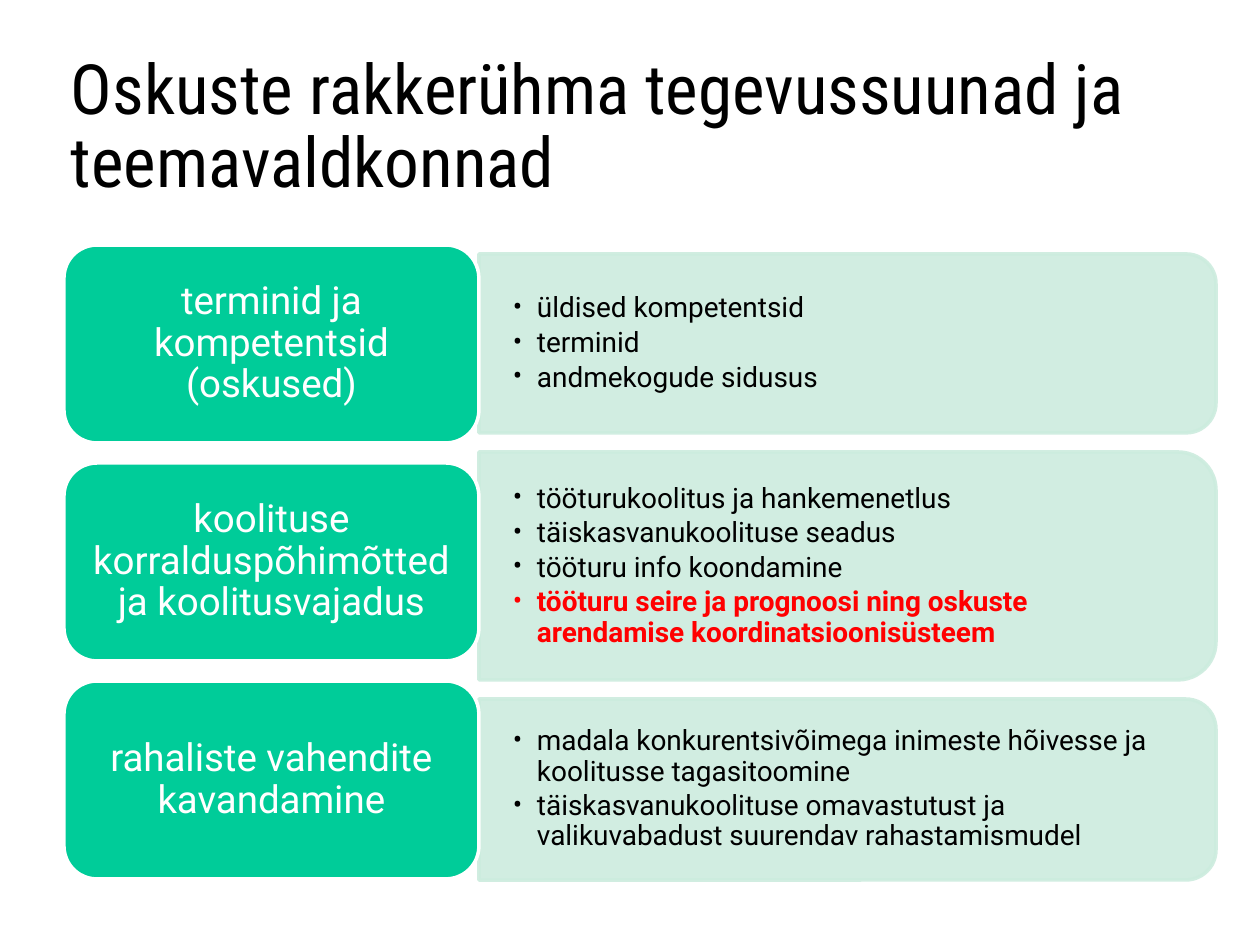
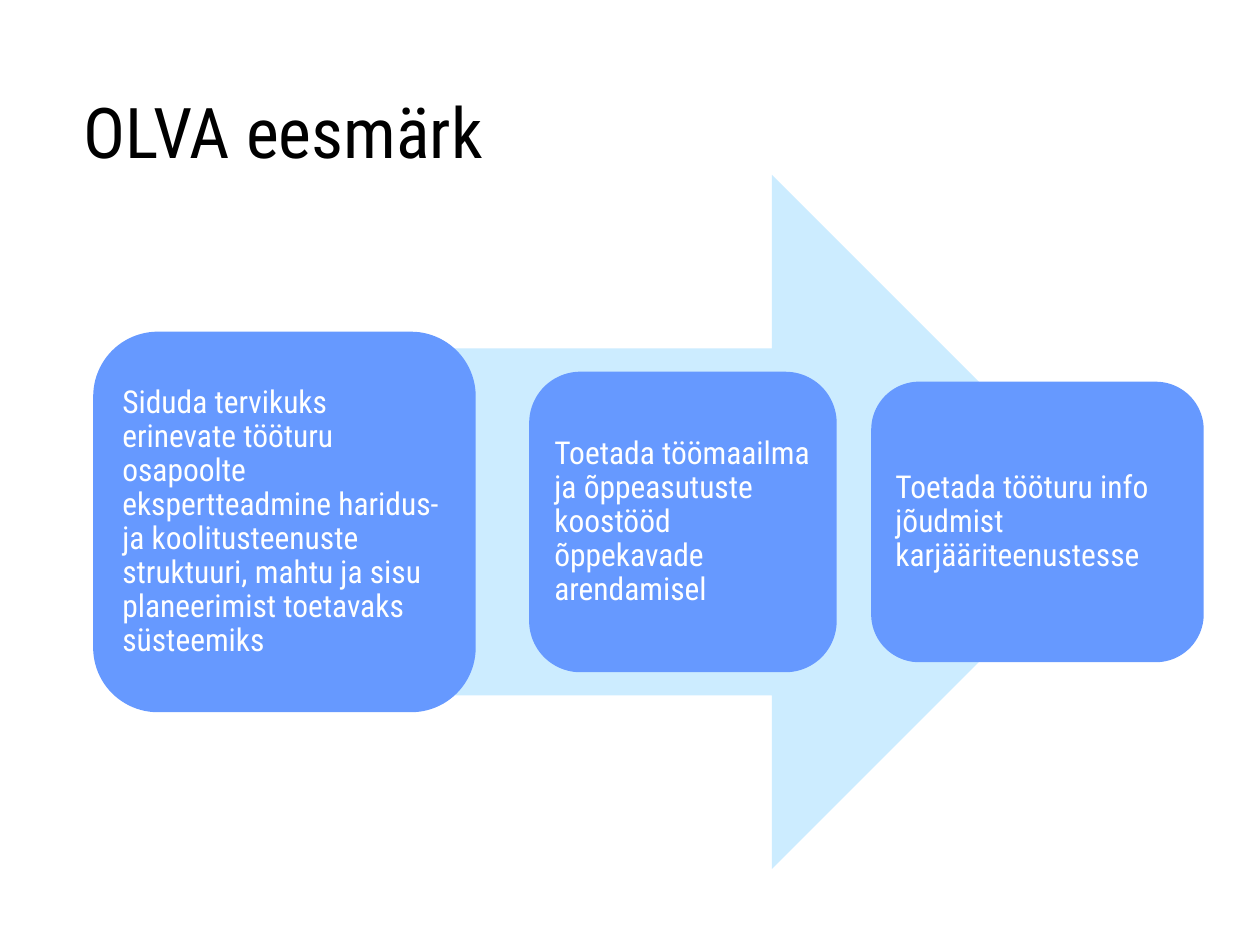
from pptx import Presentation
from pptx.dml.color import RGBColor
from pptx.enum.shapes import MSO_SHAPE as Shape
from pptx.enum.text import MSO_ANCHOR as Anchor, MSO_AUTO_SIZE as AutoSize, PP_ALIGN as Align
from pptx.oxml.ns import qn
from pptx.util import Emu, Pt
from lxml.etree import SubElement

EMU_PER_PX = 914400 / 126

COLORS = {
    "title": "000000",
    "body": "000000",
    "alert": "FF0000",
    "on_box": "FFFFFF",
    "topic": "00CC99",
    "topic_edge": "FFFFFF",
    "panel": "CCECDE",
    "arrow": "CCECFF",
    "goal": "6699FF",
}
BODY_FONT = "Roboto"
CONDENSED_FONT = "Roboto Condensed"

TOPICS_TITLE = "Oskuste rakkerühma tegevussuunad ja teemavaldkonnad"
# topic, panel height, points
TOPICS = [
    ("terminid ja kompetentsid (oskused)", 179,
     ["üldised kompetentsid", "terminid", "andmekogude sidusus"]),
    ("koolituse korralduspõhimõtted ja koolitusvajadus", 228,
     ["tööturukoolitus ja hankemenetlus",
      "täiskasvanukoolituse seadus",
      "tööturu info koondamine",
      "tööturu seire ja prognoosi ning oskuste arendamise koordinatsioonisüsteem"]),
    ("rahaliste vahendite kavandamine", 181,
     ["madala konkurentsivõimega inimeste hõivesse ja koolitusse tagasitoomine",
      "täiskasvanukoolituse omavastutust ja valikuvabadust suurendav rahastamismudel"]),
]
ALERT_POINT = TOPICS[1][2][-1]

GOALS_TITLE = "OLVA eesmärk"
# goal, left, width, height
GOALS = [
    ("Siduda tervikuks erinevate tööturu osapoolte ekspertteadmine haridus- ja "
     "koolitusteenuste struktuuri, mahtu ja sisu planeerimist toetavaks süsteemiks",
     95, 379, 377),
    ("Toetada töömaailma ja õppeasutuste koostööd õppekavade arendamisel", 531, 304, 297),
    ("Toetada tööturu info jõudmist karjääriteenustesse", 873, 329, 277),
]

TOPIC_LEFT, TOPIC_TOP, TOPIC_WIDTH, TOPIC_HEIGHT, TOPIC_STEP = 64, 245, 415, 198, 218
PANEL_LEFT, PANEL_TOP, PANEL_WIDTH, PANEL_GAP = 479, 254, 737, 19
PANEL_CORNER_INSET = 0.05
BULLET_INDENT = 24
ARROW = (178, 175, 941, 694)


def px(length):
    return Emu(round(length * EMU_PER_PX))


def rgb(name):
    return RGBColor.from_string(COLORS[name])


def set_frame(frame, inset_x=0, inset_y=0):
    frame.auto_size = AutoSize.NONE
    frame.word_wrap = True
    frame.vertical_anchor = Anchor.MIDDLE
    frame.margin_left = frame.margin_right = px(inset_x)
    frame.margin_top = frame.margin_bottom = px(inset_y)


def write(paragraph, text, font, size, color, align=Align.LEFT, spacing=0.9, bold=False):
    paragraph.alignment = align
    paragraph.line_spacing = spacing
    run = paragraph.add_run()
    run.text = text
    run.font.name = font
    run.font.size = Pt(size)
    run.font.bold = bold
    run.font.color.rgb = rgb(color)


def add_titled_slide(deck, text, size, place):
    slide = deck.slides.add_slide(deck.slide_layouts[5])
    title = slide.shapes.title
    title.left, title.top, title.width, title.height = map(px, place)
    set_frame(title.text_frame)
    write(title.text_frame.paragraphs[0], text, CONDENSED_FONT, size, "title", spacing=0.88)
    return slide


def add_filled(slide, kind, place, fill, edge=None):
    shape = slide.shapes.add_shape(kind, *map(px, place))
    shape.shadow.inherit = False
    shape.fill.solid()
    shape.fill.fore_color.rgb = rgb(fill)
    if edge:
        shape.line.color.rgb = rgb(edge)
        shape.line.width = Pt(2)
    else:
        shape.line.fill.background()
    return shape


def add_panel(slide, top, height):
    """Draw a panel rounded on its right side: a top-rounded shape turned a quarter."""
    left = PANEL_LEFT + (PANEL_WIDTH - height) / 2
    turned_top = top + (height - PANEL_WIDTH) / 2
    panel = add_filled(slide, Shape.ROUND_2_SAME_RECTANGLE,
                       (left, turned_top, height, PANEL_WIDTH), "panel", "panel")
    panel.rotation = 90
    for color in panel._element.spPr.iter(qn("a:srgbClr")):
        SubElement(color, qn("a:alpha"), val="90000")


def add_points(slide, top, height, points):
    inset = PANEL_CORNER_INSET * height
    place = (PANEL_LEFT, top + inset, PANEL_WIDTH - inset, height - 2 * inset)
    frame = slide.shapes.add_textbox(*map(px, place)).text_frame
    set_frame(frame, 34, 17)
    for index, point in enumerate(points):
        paragraph = frame.add_paragraph() if index else frame.paragraphs[0]
        paragraph.level = 1
        paragraph.space_after = Pt(2.5)
        alert = point == ALERT_POINT
        write(paragraph, point, BODY_FONT, 16, "alert" if alert else "body", bold=alert)
        properties = paragraph._p.get_or_add_pPr()
        properties.set("marL", str(px(BULLET_INDENT)))
        properties.set("indent", str(-px(BULLET_INDENT)))
        SubElement(properties, qn("a:buFont"), typeface=BODY_FONT)
        SubElement(properties, qn("a:buChar"), char="•")


def build_topics(deck):
    slide = add_titled_slide(deck, TOPICS_TITLE, 39.6, (71, 42, 1174, 174))
    panel_top = PANEL_TOP
    for row, (topic, panel_height, points) in enumerate(TOPICS):
        add_panel(slide, panel_top, panel_height)
        add_points(slide, panel_top, panel_height, points)
        place = (TOPIC_LEFT, TOPIC_TOP + row * TOPIC_STEP, TOPIC_WIDTH, TOPIC_HEIGHT)
        box = add_filled(slide, Shape.ROUNDED_RECTANGLE, place, "topic", "topic_edge")
        set_frame(box.text_frame, 11, 6)
        write(box.text_frame.paragraphs[0], topic, BODY_FONT, 22, "on_box", Align.CENTER)
        panel_top += panel_height + PANEL_GAP


def build_goals(deck):
    slide = add_titled_slide(deck, GOALS_TITLE, 40, (84, 86, 833, 101))
    add_filled(slide, Shape.RIGHT_ARROW, ARROW, "arrow")
    middle = ARROW[1] + ARROW[3] / 2
    for goal, left, width, height in GOALS:
        place = (left, middle - height / 2, width, height)
        box = add_filled(slide, Shape.ROUNDED_RECTANGLE, place, "goal", "goal")
        set_frame(box.text_frame, 9, 9)
        write(box.text_frame.paragraphs[0], goal, CONDENSED_FONT, 18, "on_box")


def main():
    deck = Presentation()
    deck.slide_width, deck.slide_height = px(1260), px(945)
    build_topics(deck)
    build_goals(deck)
    deck.save("out.pptx")


if __name__ == "__main__":
    main()
